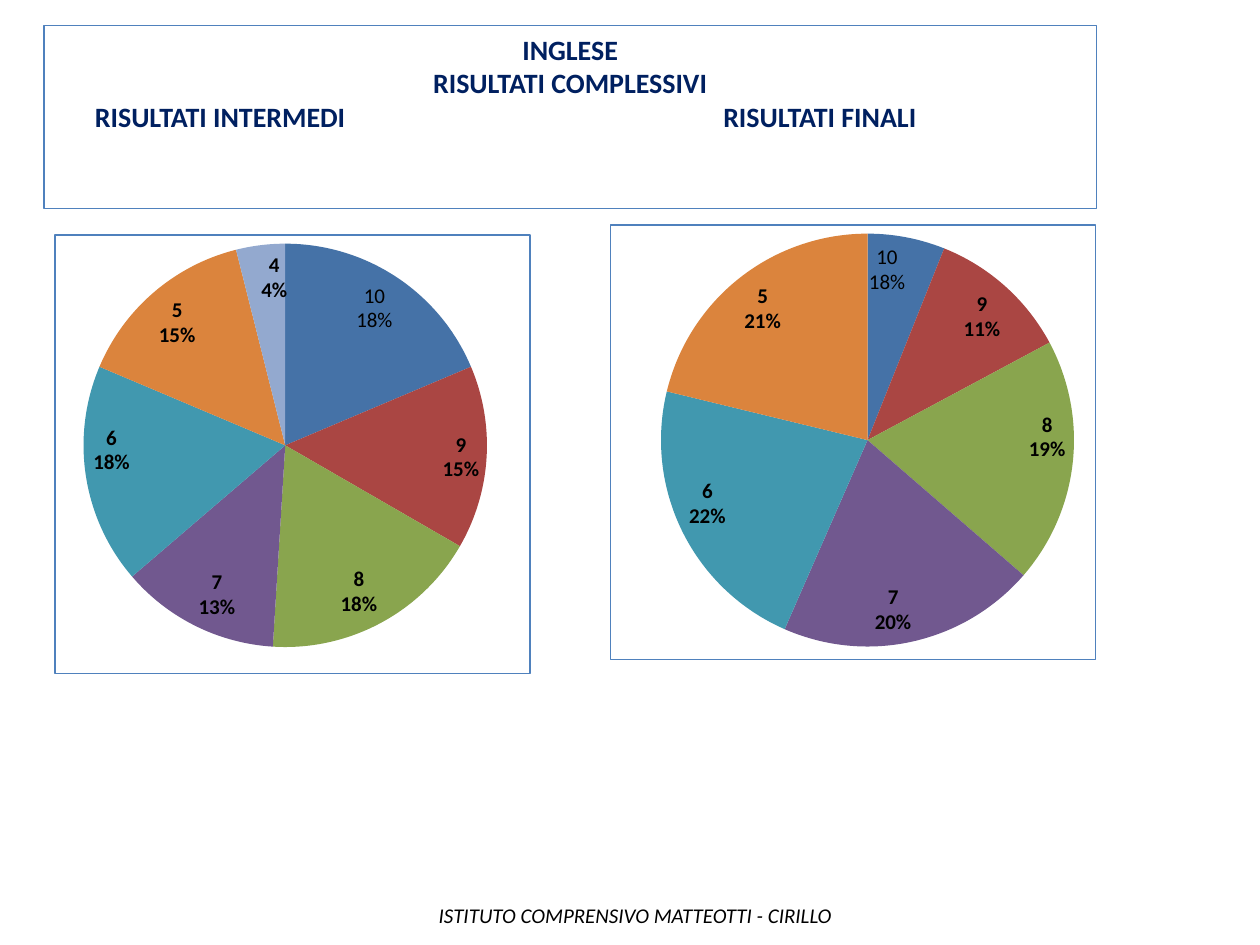
import pptx
import pptx.util
import pptx.dml.color
import pptx.chart.data
import pptx.enum.chart
import pptx.enum.shapes
import pptx.enum.text
import pptx.oxml
import pptx.oxml.ns

Pt = pptx.util.Pt
Align = pptx.enum.text.PP_ALIGN
FONT = "Calibri"
INK = {"navy": "002060", "black": "000000", "edge": "4F81BD"}
SLICE = {
    "10": "4572A7", "9": "AA4643", "8": "89A54E", "7": "71588F",
    "6": "4198AF", "5": "DB843D", "4": "93A9CF",
}


def tint(name):
    return pptx.dml.color.RGBColor.from_string(name)


def style(font, size, color="black", bold=False, italic=False):
    font.name = FONT
    font.size = Pt(size)
    font.bold = bold
    font.italic = italic
    font.color.rgb = tint(INK[color])


def write(para, text, align=Align.LEFT, **look):
    para.alignment = align
    run = para.add_run()
    run.text = text
    style(run.font, **look)


def set_tabs(para, *stops):
    props = para._p.get_or_add_pPr()
    tabs = pptx.oxml.parse_xml(f"<a:tabLst {pptx.oxml.ns.nsdecls('a')}/>")
    for stop in stops:
        tab = tabs.makeelement(pptx.oxml.ns.qn("a:tab"), {"pos": str(Pt(stop)), "algn": "l"})
        tabs.append(tab)
    props.append(tabs)


def add_head(slide):
    kind = pptx.enum.shapes.MSO_SHAPE.RECTANGLE
    box = slide.shapes.add_shape(kind, Pt(25.2), Pt(14.8), Pt(601.2), Pt(104.6))
    box.shadow.inherit = False
    box.fill.background()
    box.line.color.rgb = tint(INK["edge"])
    box.line.width = Pt(0.75)
    frame = box.text_frame
    frame.word_wrap = True
    frame.vertical_anchor = pptx.enum.text.MSO_ANCHOR.TOP
    look = {"size": 16, "color": "navy", "bold": True}
    write(frame.paragraphs[0], "INGLESE", Align.CENTER, **look)
    write(frame.add_paragraph(), "RISULTATI COMPLESSIVI", Align.CENTER, **look)
    para = frame.add_paragraph()
    write(para, "\tRISULTATI INTERMEDI\tRISULTATI FINALI", **look)
    set_tabs(para, 22, 381)


def add_foot(slide):
    box = slide.shapes.add_textbox(Pt(243.6), Pt(512), Pt(246), Pt(21.6))
    box.text_frame.word_wrap = False
    write(box.text_frame.paragraphs[0], "ISTITUTO COMPRENSIVO MATTEOTTI - CIRILLO",
          size=12, italic=True)


def add_edge(chart):
    edge = pptx.oxml.parse_xml(
        f"<c:spPr {pptx.oxml.ns.nsdecls('c', 'a')}><a:noFill/>"
        f'<a:ln w="{Pt(0.75)}"><a:solidFill><a:srgbClr val="{INK["edge"]}"/>'
        "</a:solidFill></a:ln></c:spPr>")
    chart._chartSpace.chart.addnext(edge)


def set_plot(chart, plot):
    area = chart._chartSpace.chart.plotArea
    for old in area.findall(pptx.oxml.ns.qn("c:layout")):
        area.remove(old)
    sides = "".join(f'<c:{k} val="{v}"/>' for k, v in zip("xywh", plot))
    area.insert(0, pptx.oxml.parse_xml(
        f"<c:layout {pptx.oxml.ns.nsdecls('c')}><c:manualLayout>"
        '<c:layoutTarget val="inner"/><c:xMode val="edge"/><c:yMode val="edge"/>'
        f"{sides}</c:manualLayout></c:layout>"))


def hide_label(labels, index):
    labels._element.insert(1, pptx.oxml.parse_xml(
        f'<c:dLbl {pptx.oxml.ns.nsdecls("c")}><c:idx val="{index}"/>'
        '<c:delete val="1"/></c:dLbl>'))


def add_labels(series, values):
    place = pptx.enum.chart.XL_LABEL_POSITION.INSIDE_END
    labels = series.data_labels
    labels.show_category_name = True
    labels.show_percentage = True
    labels.show_value = False
    labels.position = place
    labels.number_format = "0%"
    labels.number_format_is_linked = False
    style(labels.font, 12, bold=True)
    first = series.points[0].data_label
    frame = first.text_frame
    write(frame.paragraphs[0], "10", Align.CENTER, size=12)
    write(frame.add_paragraph(), "18%", Align.CENTER, size=12)
    first.position = place
    for index, value in enumerate(values):
        if value == 0:
            hide_label(labels, index)


def add_pie(slide, spot, plot, values):
    data = pptx.chart.data.CategoryChartData()
    data.categories = list(SLICE)
    data.add_series("Series 1", values)
    kind = pptx.enum.chart.XL_CHART_TYPE.PIE
    chart = slide.shapes.add_chart(kind, *map(Pt, spot), data).chart
    chart.has_title = False
    chart.has_legend = False
    style(chart.font, 18)
    chart.plots[0].vary_by_categories = True
    series = chart.plots[0].series[0]
    for index, color in enumerate(SLICE.values()):
        fill = series.points[index].format.fill
        fill.solid()
        fill.fore_color.rgb = tint(color)
    add_labels(series, values)
    set_plot(chart, plot)
    add_edge(chart)


def main():
    deck = pptx.Presentation()
    deck.slide_width, deck.slide_height = Pt(720), Pt(540)
    slide = deck.slides.add_slide(deck.slide_layouts[6])
    add_head(slide)
    add_foot(slide)
    add_pie(slide, (348.5, 128.2, 277.9, 249.1), (0.1, 0.02, 0.86, 0.95),
            (6, 11, 19, 20, 22, 21, 0))
    add_pie(slide, (31, 133.9, 272.2, 251.3), (0.06, 0.02, 0.85, 0.92),
            (19, 15, 18, 13, 18, 15, 4))
    deck.save("out.pptx")


if __name__ == "__main__":
    main()
